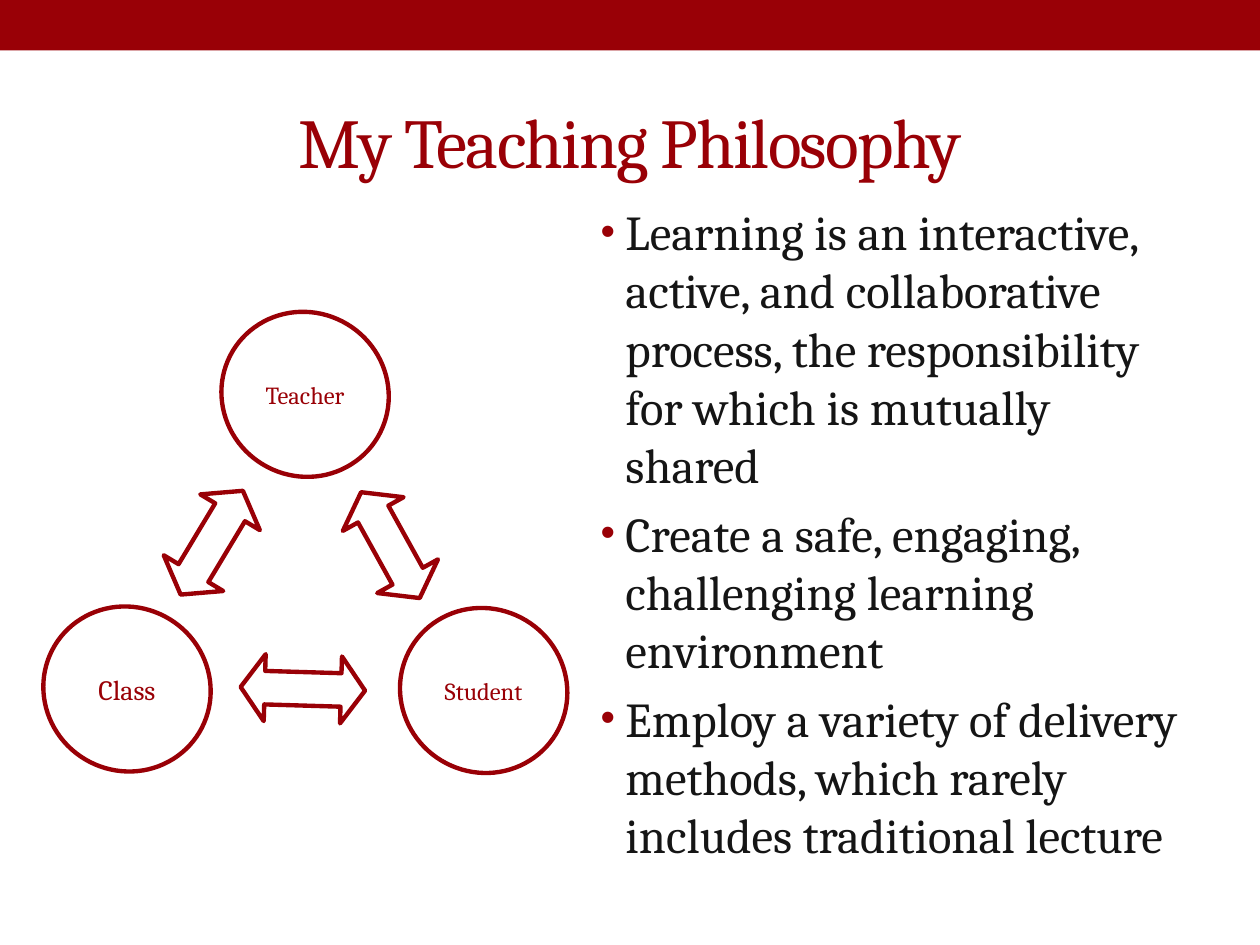
import pptx
import pptx.dml.color
import pptx.enum.shapes
import pptx.enum.text
import pptx.oxml
import pptx.oxml.ns
import pptx.util
from pptx.util import Cm

FONT = "Cambria"
RED, WHITE, INK = "990006", "FFFFFF", "151515"
SHAPES = pptx.enum.shapes.MSO_SHAPE
MIDDLE = pptx.enum.text.MSO_ANCHOR.MIDDLE
CENTER = pptx.enum.text.PP_ALIGN.CENTER

POINTS = [
    "Learning is an interactive, active, and collaborative process, "
    "the responsibility for which is mutually shared",
    "Create a safe, engaging, challenging learning environment",
    "Employ a variety of delivery methods, which rarely includes traditional lecture",
]

# Label, left, top (cm), text size
CIRCLES = [
    ("Teacher", 4.45, 6.3, 14),
    ("Student", 8.05, 12.27, 14),
    ("Class", 0.86, 12.24, 16),
]
CIRCLE_TILT = 31

# Left, top, width, height (cm), rotation
ARROWS = [
    (6.65, 10.29, 2.44, 1.4, 61),
    (4.85, 13.21, 2.51, 1.35, 181.7),
    (3.05, 10.24, 2.44, 1.4, 301),
]


def color(value):
    return pptx.dml.color.RGBColor.from_string(value)


def add_run(para, text, size, text_color):
    span = para.add_run()
    span.text = text
    span.font.name = FONT
    span.font.size = pptx.util.Pt(size)
    span.font.color.rgb = color(text_color)
    return span


def add_figure(shapes, kind, bounds, fill, line=None):
    figure = shapes.add_shape(kind, *(Cm(value) for value in bounds))
    figure.shadow.inherit = False
    figure.fill.solid()
    figure.fill.fore_color.rgb = color(fill)
    if line:
        figure.line.color.rgb = color(line)
        figure.line.width = pptx.util.Pt(2.5)
    else:
        figure.line.fill.background()
    return figure


def set_title(slide, text):
    title = slide.shapes.title
    title.left, title.top = Cm(1.27), Cm(1.47)
    title.width, title.height = Cm(22.86), Cm(2.74)
    title.text_frame.vertical_anchor = MIDDLE
    para = title.text_frame.paragraphs[0]
    para.alignment = CENTER
    span = add_run(para, text, 40, RED)
    span.font._element.set("spc", "-100")


def add_bullet(para):
    properties = para._p.get_or_add_pPr()
    properties.set("marL", str(Cm(0.5)))
    properties.set("indent", str(-Cm(0.5)))
    namespace = pptx.oxml.ns.nsdecls("a")
    for markup in (
        f'<a:buClr {namespace}><a:srgbClr val="{RED}"/></a:buClr>',
        f'<a:buSzPct {namespace} val="85000"/>',
        f'<a:buFont {namespace} typeface="Arial"/>',
        f'<a:buChar {namespace} char="•"/>',
    ):
        properties.append(pptx.oxml.parse_xml(markup))


def add_points(slide, points):
    box = slide.shapes.add_textbox(Cm(11.86), Cm(3.94), Cm(12.27), Cm(14.2))
    frame = box.text_frame
    frame.word_wrap = True
    for index, point in enumerate(points):
        para = frame.add_paragraph() if index else frame.paragraphs[0]
        para.space_before = pptx.util.Pt(5.6)
        add_bullet(para)
        add_run(para, point, 27.8, INK)


def add_circle(shapes, label, left, top, size):
    circle = add_figure(shapes, SHAPES.FLOWCHART_CONNECTOR,
                        (left, top, 3.4, 3.3), WHITE, RED)
    circle.rotation = CIRCLE_TILT
    frame = circle.text_frame
    frame.vertical_anchor = MIDDLE
    # Turn the label back so that it reads level
    frame._txBody.bodyPr.set("rot", str(-CIRCLE_TILT * 60000))
    frame.margin_left = frame.margin_right = Cm(0.25)
    frame.margin_top = frame.margin_bottom = Cm(0.25)
    para = frame.paragraphs[0]
    para.alignment = CENTER
    add_run(para, label, size, RED)


def add_arrow(shapes, *bounds, rotation):
    arrow = add_figure(shapes, SHAPES.LEFT_RIGHT_ARROW, bounds, WHITE, RED)
    arrow.adjustments[0] = 0.5
    arrow.adjustments[1] = 0.36
    arrow.rotation = rotation


def main():
    deck = pptx.Presentation()
    deck.slide_width, deck.slide_height = Cm(25.4), Cm(19.05)
    slide = deck.slides.add_slide(deck.slide_layouts[5])

    # Top band, title and bullet points
    add_figure(slide.shapes, SHAPES.RECTANGLE, (0, 0, 25.4, 1.02), RED)
    set_title(slide, "My Teaching Philosophy")
    add_points(slide, POINTS)

    # Triangle of roles
    triangle = slide.shapes.add_group_shape().shapes
    for circle in CIRCLES:
        add_circle(triangle, *circle)
    for *bounds, rotation in ARROWS:
        add_arrow(triangle, *bounds, rotation=rotation)

    deck.save("out.pptx")


if __name__ == "__main__":
    main()
